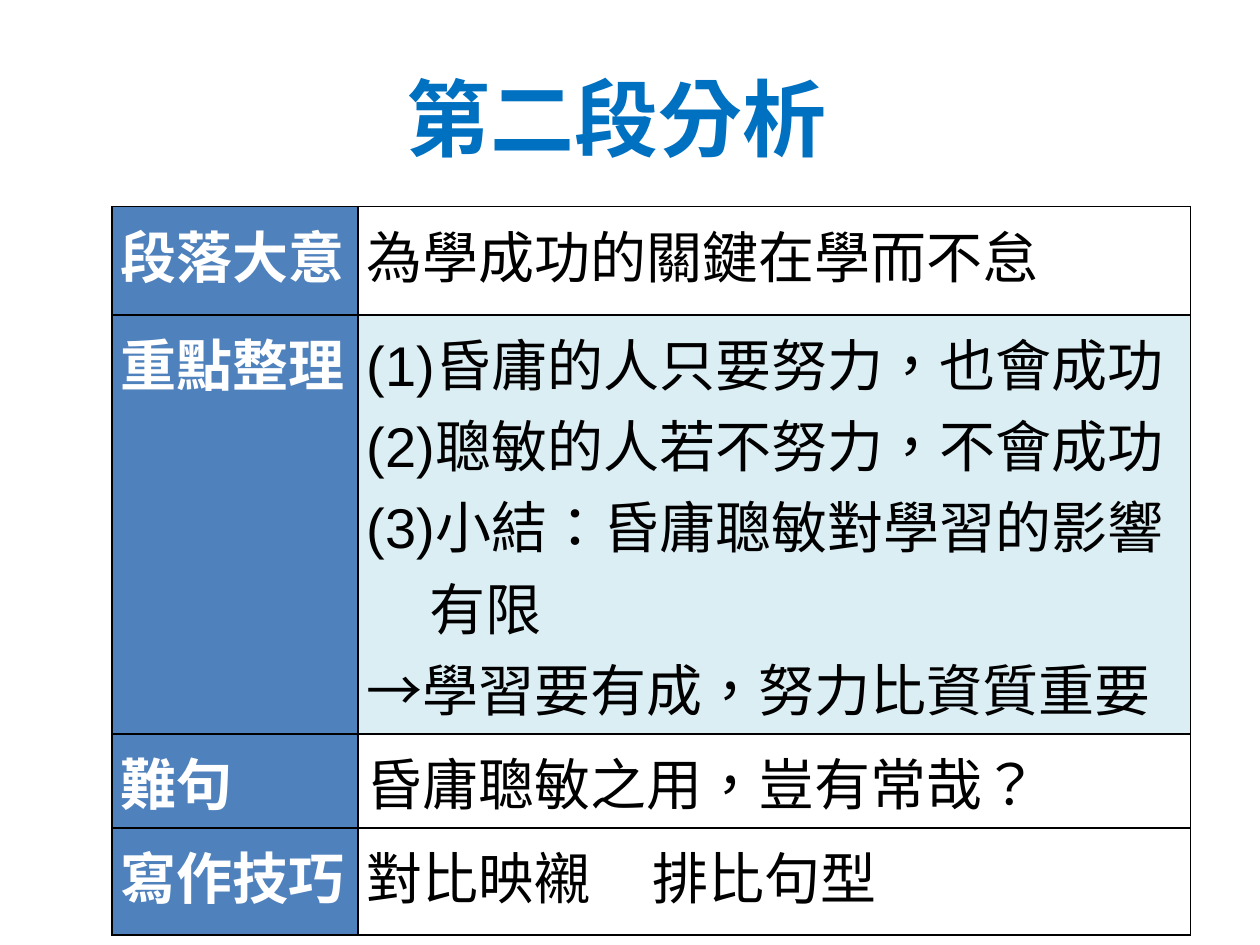
"""Build the slide analysing the second paragraph of a classical text."""
import dataclasses

import lxml.etree
import pptx
import pptx.dml.color
import pptx.enum.lang
import pptx.enum.text
import pptx.oxml.ns
import pptx.slide
import pptx.table
import pptx.text.text
import pptx.util

Inches = pptx.util.Inches
BLACK, WHITE = "000000", "FFFFFF"
HEADING_BLUE, LABEL_BLUE, KEY_POINTS_TINT = "0070C0", "4F81BD", "DBEEF4"


@dataclasses.dataclass(frozen=True)
class Phrase:
    text: str
    font: str = "Arial"


@dataclasses.dataclass(frozen=True)
class Line:
    phrases: tuple[Phrase, ...]
    indent: float = 0
    tab: float = 0


@dataclasses.dataclass(frozen=True)
class Topic:
    label: str
    lines: tuple[Line, ...]
    height: float
    tint: str | None = None


def line(*texts: str, indent: float = 0) -> Line:
    return Line(tuple(Phrase(text) for text in texts), indent)


TOPICS = (
    Topic("段落大意", (line("為學成功的關鍵在學而不怠"),), 0.86),
    Topic(
        "重點整理",
        (
            line("(1)昏庸的人只要努力，也會成功"),
            line("(2)聰敏的人若不努力，不會成功"),
            line("(3)小結：昏庸聰敏對學習的影響"),
            line("有限", indent=0.5),
            Line((Phrase("→"), Phrase("學習要有成，努力比資質重要", "Calibri"))),
        ),
        1.65,
        KEY_POINTS_TINT,
    ),
    Topic("難句", (line("昏庸聰敏之用，豈有常哉？"),), 0.63),
    Topic(
        "寫作技巧",
        (Line((Phrase("對比映襯\t", "Calibri"), Phrase("排比句型")), tab=2.27),),
        0.85,
    ),
)


def rgb(code: str) -> pptx.dml.color.RGBColor:
    return pptx.dml.color.RGBColor.from_string(code)


def add_phrase(paragraph: pptx.text.text._Paragraph, phrase: Phrase,
               size: float, color: str, bold: bool) -> None:
    run = paragraph.add_run()
    run.text = phrase.text
    run.font.name = phrase.font
    run.font.size = pptx.util.Pt(size)
    run.font.bold = bold
    run.font.color.rgb = rgb(color)
    run.font.language_id = pptx.enum.lang.MSO_LANGUAGE_ID.TRADITIONAL_CHINESE


def format_line(paragraph: pptx.text.text._Paragraph, content: Line) -> None:
    properties = paragraph._p.get_or_add_pPr()
    if content.indent:
        properties.set("marL", str(Inches(content.indent)))
    if content.tab:
        stops = lxml.etree.SubElement(properties, pptx.oxml.ns.qn("a:tabLst"))
        lxml.etree.SubElement(stops, pptx.oxml.ns.qn("a:tab"),
                              pos=str(Inches(content.tab)), algn="l")


def add_borders(cell: pptx.table._Cell) -> None:
    properties = cell._tc.get_or_add_tcPr()
    for position, side in enumerate("LRTB"):
        border = lxml.etree.Element(pptx.oxml.ns.qn(f"a:ln{side}"),
                                    w=str(pptx.util.Pt(1)))
        fill = lxml.etree.SubElement(border, pptx.oxml.ns.qn("a:solidFill"))
        lxml.etree.SubElement(fill, pptx.oxml.ns.qn("a:srgbClr"), val=BLACK)
        properties.insert(position, border)


def fill_cell(cell: pptx.table._Cell, lines: tuple[Line, ...], color: str,
              bold: bool, tint: str | None) -> None:
    cell.margin_left = cell.margin_right = Inches(0.07)
    cell.margin_top = cell.margin_bottom = Inches(0.05)
    if tint:
        cell.fill.solid()
        cell.fill.fore_color.rgb = rgb(tint)
    else:
        cell.fill.background()
    add_borders(cell)
    frame = cell.text_frame
    for index, content in enumerate(lines):
        paragraph = frame.add_paragraph() if index else frame.paragraphs[0]
        format_line(paragraph, content)
        for phrase in content.phrases:
            add_phrase(paragraph, phrase, 32, color, bold)


def add_heading(slide: pptx.slide.Slide, text: str) -> None:
    heading = slide.shapes.title
    heading.left, heading.top = Inches(2.19), Inches(0.55)
    heading.width, heading.height = Inches(5.4), Inches(0.76)
    frame = heading.text_frame
    frame.auto_size = pptx.enum.text.MSO_AUTO_SIZE.NONE
    frame.vertical_anchor = pptx.enum.text.MSO_ANCHOR.MIDDLE
    paragraph = frame.paragraphs[0]
    paragraph.alignment = pptx.enum.text.PP_ALIGN.CENTER
    add_phrase(paragraph, Phrase(text, "Calibri"), 48, HEADING_BLUE, True)


def add_analysis(slide: pptx.slide.Slide, topics: tuple[Topic, ...]) -> None:
    height = sum(topic.height for topic in topics)
    analysis = slide.shapes.add_table(
        len(topics), 2, Inches(0.89), Inches(1.64), Inches(8.56), Inches(height)
    ).table
    analysis.first_row = analysis.horz_banding = False
    for column, width in zip(analysis.columns, (1.95, 6.61)):
        column.width = Inches(width)
    for index, topic in enumerate(topics):
        analysis.rows[index].height = Inches(topic.height)
        fill_cell(analysis.cell(index, 0), (line(topic.label),), WHITE, True, LABEL_BLUE)
        fill_cell(analysis.cell(index, 1), topic.lines, BLACK, False, topic.tint)


def main() -> None:
    presentation = pptx.Presentation()
    presentation.slide_width, presentation.slide_height = Inches(10), Inches(7.5)
    slide = presentation.slides.add_slide(presentation.slide_layouts[5])
    add_heading(slide, "第二段分析")
    add_analysis(slide, TOPICS)
    presentation.save("out.pptx")


if __name__ == "__main__":
    main()
